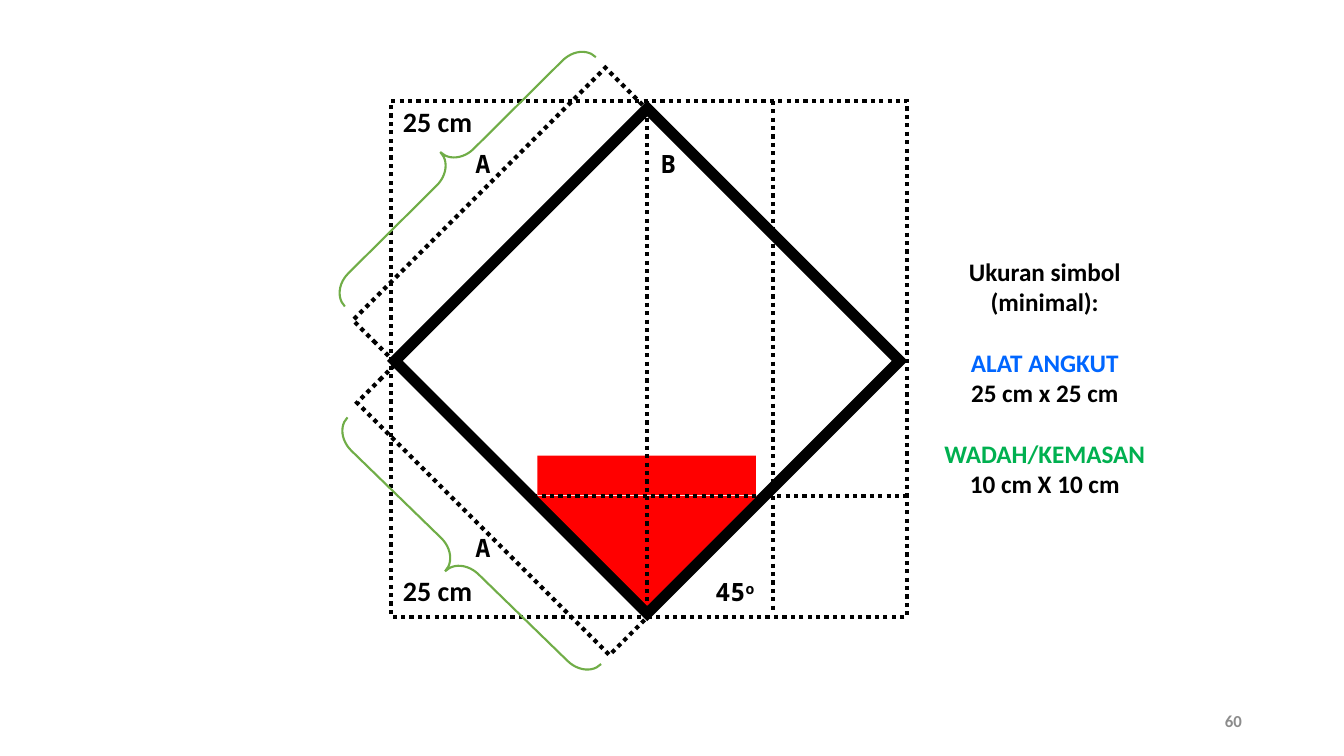
import pptx
import pptx.util
import pptx.dml.color
import pptx.enum.dml
import pptx.enum.shapes
import pptx.enum.text
import pptx.oxml.ns
import lxml.etree

Pt = pptx.util.Pt
RGB = pptx.dml.color.RGBColor.from_string
MSO = pptx.enum.shapes.MSO_SHAPE
ALIGN = pptx.enum.text.PP_ALIGN
ANCHOR = pptx.enum.text.MSO_ANCHOR
DOT = pptx.enum.dml.MSO_LINE.ROUND_DOT
qn = pptx.oxml.ns.qn

MONO = "Noto Sans Mono"
COLORS = {"black": "000000", "white": "FFFFFF", "red": "FF0000", "brace": "70AD47",
          "blue": "0066FF", "green": "00B050", "grey": "8C8C8C"}

prs = pptx.Presentation()
prs.slide_width, prs.slide_height = Pt(960), Pt(540)
s = prs.slides.add_slide(prs.slide_layouts[6])


def add_text(text, box=None, p=None, size=18, font="Calibri", color="black",
             align=ALIGN.CENTER, anchor=ANCHOR.TOP, gap=0):
    """Write bold text in a new box, or at the end of paragraph p."""
    if box:
        tf = s.shapes.add_textbox(*[Pt(v) for v in box]).text_frame
        tf.word_wrap = True
        tf.vertical_anchor = anchor
        p = tf.paragraphs[0]
    p.alignment = align
    if gap:
        p.space_before = Pt(gap)
    r = p.add_run()
    r.text = text
    r.font.size, r.font.name, r.font.bold = Pt(size), font, True
    r.font.color.rgb = RGB(COLORS[color])
    return p


def add_shape(kind, x, y, w, h, rotation=0, fill=None, line=None, width=3, dash=None):
    """Add a preset shape without shadow; sharp corners when outlined."""
    sp = s.shapes.add_shape(kind, Pt(x), Pt(y), Pt(w), Pt(h))
    sp.shadow.inherit = False
    sp.rotation = rotation
    if fill:
        sp.fill.solid()
        sp.fill.fore_color.rgb = RGB(COLORS[fill])
    else:
        sp.fill.background()
    if line:
        sp.line.color.rgb = RGB(COLORS[line])
        sp.line.width = Pt(width)
        if dash:
            sp.line.dash_style = dash
        ln = sp._element.spPr.find(qn("a:ln"))
        lxml.etree.SubElement(ln, qn("a:miter")).set("lim", "800000")
    else:
        sp.line.fill.background()
    return sp


# Dotted side bands and outer frame
for x, y, rotation in [(338.4, 234, 135), (335.5, 27.4, 45)]:
    add_shape(MSO.RECTANGLE, x, y, 46, 255, rotation, line="black", dash=DOT)
add_shape(MSO.RECTANGLE, 279.4, 72, 368.6, 368.6, line="black", dash=DOT)

# Page number
add_text("60", (678.2, 500.4, 216, 28.8), size=12, color="grey",
         align=ALIGN.RIGHT, anchor=ANCHOR.MIDDLE)

# Diamond symbol with red bottom
add_shape(MSO.RECTANGLE, 334.8, 130.3, 255, 255, 45, fill="white", line="black", width=8)
add_shape(MSO.RIGHT_TRIANGLE, 406.8, 298.8, 110.9, 110.9, 315, fill="red")
add_shape(MSO.RECTANGLE, 383.8, 325.4, 156.2, 28.1, fill="red")

# Dotted guide lines
for x1, y1, x2, y2 in [(552.2, 72, 552.2, 437.8), (462.2, 72, 462.2, 437.8),
                       (380.9, 354.2, 647.3, 354.2)]:
    guide = s.shapes.add_connector(pptx.enum.shapes.MSO_CONNECTOR.STRAIGHT,
                                   Pt(x1), Pt(y1), Pt(x2), Pt(y2))
    guide.line.color.rgb = RGB(COLORS["black"])
    guide.line.width = Pt(3)
    guide.line.dash_style = DOT
    lxml.etree.SubElement(guide._element.spPr, qn("a:effectLst"))

# Side letters and angle
for text, x, y in [("B", 444.2, 102.2), ("A", 311.8, 102.2), ("A", 311.8, 376.6),
                   ("45", 491.8, 408.2)]:
    p = add_text(text, (x, y, 66.2, 28.8), font=MONO)
add_text("o", p=p, font=MONO)
p.runs[-1].font._element.set("baseline", "30000")

# Braces with side lengths
for x, y, rotation, label_y in [(313.2, 270.7, 314.2, 406.1), (310.3, -7.2, 45.2, 71.3)]:
    brace = add_shape(MSO.RIGHT_BRACE, x, y, 30.2, 252.7, rotation, line="brace", width=1.5)
    brace.adjustments[0], brace.adjustments[1] = 0.615, 0.501
    brace._element.spPr.find(qn("a:xfrm")).set("flipH", "1")
    add_text("25 cm", (270, label_y, 85, 31.7), size=20)

# Minimum sizes
add_text("Ukuran simbol", (644.4, 179.3, 203.8, 181.4))
tf = s.shapes[-1].text_frame
for text, color, gap in [("(minimal):", "black", 0),
                         ("ALAT ANGKUT", "blue", 22), ("25 cm x 25 cm", "black", 0),
                         ("WADAH/KEMASAN", "green", 22), ("10 cm X 10 cm", "black", 0)]:
    add_text(text, p=tf.add_paragraph(), color=color, gap=gap)

prs.save("out.pptx")
